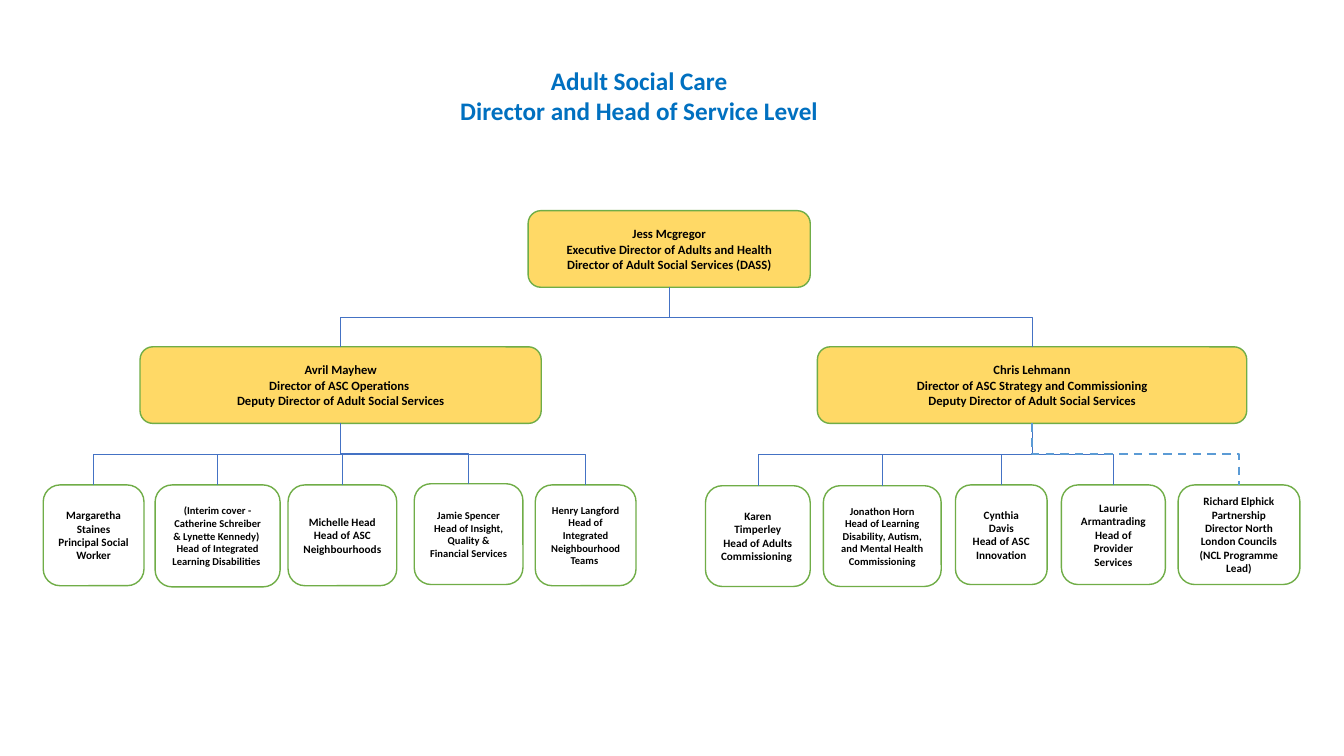
from lxml.etree import SubElement
from pptx import Presentation
from pptx.dml.color import RGBColor
from pptx.enum.dml import MSO_LINE_DASH_STYLE as Dash
from pptx.enum.shapes import MSO_CONNECTOR as Link, MSO_SHAPE as Preset
from pptx.enum.text import MSO_ANCHOR as Anchor, MSO_AUTO_SIZE as AutoSize, PP_ALIGN as Align
from pptx.oxml.ns import qn
from pptx.util import Cm, Pt

AMBER, WHITE, GREEN = "FFD966", "FFFFFF", "70AD47"
BLUE, LIGHT_BLUE, TITLE_BLUE = "4472C4", "5B9BD5", "0070C0"

OPERATIONS_TEAM = [
    (1.09, 12.22, 2.54, 2.54, 8, ["Margaretha Staines", "Principal Social Worker"]),
    (3.91, 12.22, 3.15, 2.57, 7.5, ["(Interim cover - Catherine Schreiber & Lynette Kennedy) ",
                                    "Head of Integrated Learning Disabilities "]),
    (7.26, 12.22, 2.74, 2.54, 8, ["Michelle Head", "Head of ASC Neighbourhoods"]),
    (10.44, 12.19, 2.74, 2.54, 7.5, ["Jamie Spencer", "Head of Insight, Quality & Financial Services"]),
    (13.49, 12.22, 2.54, 2.54, 7.5, ["Henry Langford", "Head of Integrated Neighbourhood Teams "]),
]
COMMISSIONING_TEAM = [
    (17.78, 12.24, 2.64, 2.54, 8, ["Karen Timperley", "Head of Adults Commissioning "]),
    (20.75, 12.24, 2.97, 2.54, 7.5, ["Jonathon Horn",
                                     "Head of Learning Disability, Autism, and Mental Health Commissioning"]),
    (24.08, 12.22, 2.31, 2.51, 8, ["Cynthia Davis", "Head of ASC Innovation"]),
    (26.75, 12.22, 2.62, 2.51, 8, ["Laurie Armantrading", "Head of Provider Services"]),
]
PARTNERSHIP_DIRECTOR = (29.69, 12.22, 3.07, 2.51, 8, [
    "Richard Elphick", "Partnership Director North London Councils", "(NCL Programme Lead)"])


def colour(value):
    return RGBColor.from_string(value)


def write(frame, lines, size, ink="000000", anchor=Anchor.MIDDLE):
    frame.word_wrap = True
    frame.auto_size = AutoSize.NONE
    frame.vertical_anchor = anchor
    for number, line in enumerate(lines):
        paragraph = frame.add_paragraph() if number else frame.paragraphs[0]
        paragraph.alignment = Align.CENTER
        run = paragraph.add_run()
        run.text = line
        run.font.name = "Calibri"
        run.font.size = Pt(size)
        run.font.bold = True
        run.font.color.rgb = colour(ink)


def add_title(slide, lines):
    title = slide.shapes.title
    title.left, title.top, title.width, title.height = Cm(11.33), Cm(1.52), Cm(9.7), Cm(1.8)
    write(title.text_frame, lines, 18, ink=TITLE_BLUE, anchor=Anchor.TOP)


def add_post(slide, left, top, width, height, size, lines, fill=WHITE):
    post = slide.shapes.add_shape(Preset.ROUNDED_RECTANGLE, Cm(left), Cm(top), Cm(width), Cm(height))
    post.shadow.inherit = False
    post.fill.solid()
    post.fill.fore_color.rgb = colour(fill)
    post.line.color.rgb = colour(GREEN)
    post.line.width = Pt(1)
    write(post.text_frame, lines, size)
    return post


def add_report_line(slide, manager, report, ink=BLUE, width=0.5, dash=None):
    line = slide.shapes.add_connector(Link.ELBOW, 0, 0, 0, 0)
    line.begin_connect(manager, 2)
    line.end_connect(report, 0)
    start_x, start_y = manager.left + manager.width // 2, manager.top + manager.height
    end_x, end_y = report.left + report.width // 2, report.top
    drop, reach = end_y - start_y, abs(end_x - start_x)
    line.left = (start_x + end_x - drop) // 2
    line.top = (start_y + end_y - reach) // 2
    line.width, line.height = drop, reach
    goes_right = end_x > start_x
    line.rotation = 270 if goes_right else 90
    line._element.spPr.xfrm.flipH = goes_right
    line.line.color.rgb = colour(ink)
    line.line.width = Pt(width)
    if dash:
        line.line.dash_style = dash
    SubElement(line._element.spPr, qn("a:effectLst"))


def main():
    deck = Presentation()
    deck.slide_width, deck.slide_height = Cm(33.87), Cm(19.05)
    slide = deck.slides.add_slide(deck.slide_layouts[5])
    add_title(slide, ["Adult Social Care ", "Director and Head of Service Level "])

    executive = add_post(slide, 13.31, 5.31, 7.11, 1.93, 9, [
        "Jess Mcgregor", "Executive Director of Adults and Health",
        "Director of Adult Social Services (DASS)"], fill=AMBER)
    operations = add_post(slide, 3.53, 8.74, 10.11, 1.93, 9, [
        "Avril Mayhew", "Director of ASC Operations ",
        "Deputy Director of Adult Social Services"], fill=AMBER)
    commissioning = add_post(slide, 20.6, 8.74, 10.82, 1.93, 9, [
        "Chris Lehmann", "Director of ASC Strategy and Commissioning",
        "Deputy Director of Adult Social Services"], fill=AMBER)

    for director, team in ((operations, OPERATIONS_TEAM), (commissioning, COMMISSIONING_TEAM)):
        add_report_line(slide, executive, director)
        for head in team:
            add_report_line(slide, director, add_post(slide, *head))

    partner = add_post(slide, *PARTNERSHIP_DIRECTOR)
    add_report_line(slide, commissioning, partner, ink=LIGHT_BLUE, width=1.5, dash=Dash.DASH)
    deck.save("out.pptx")


if __name__ == "__main__":
    main()
